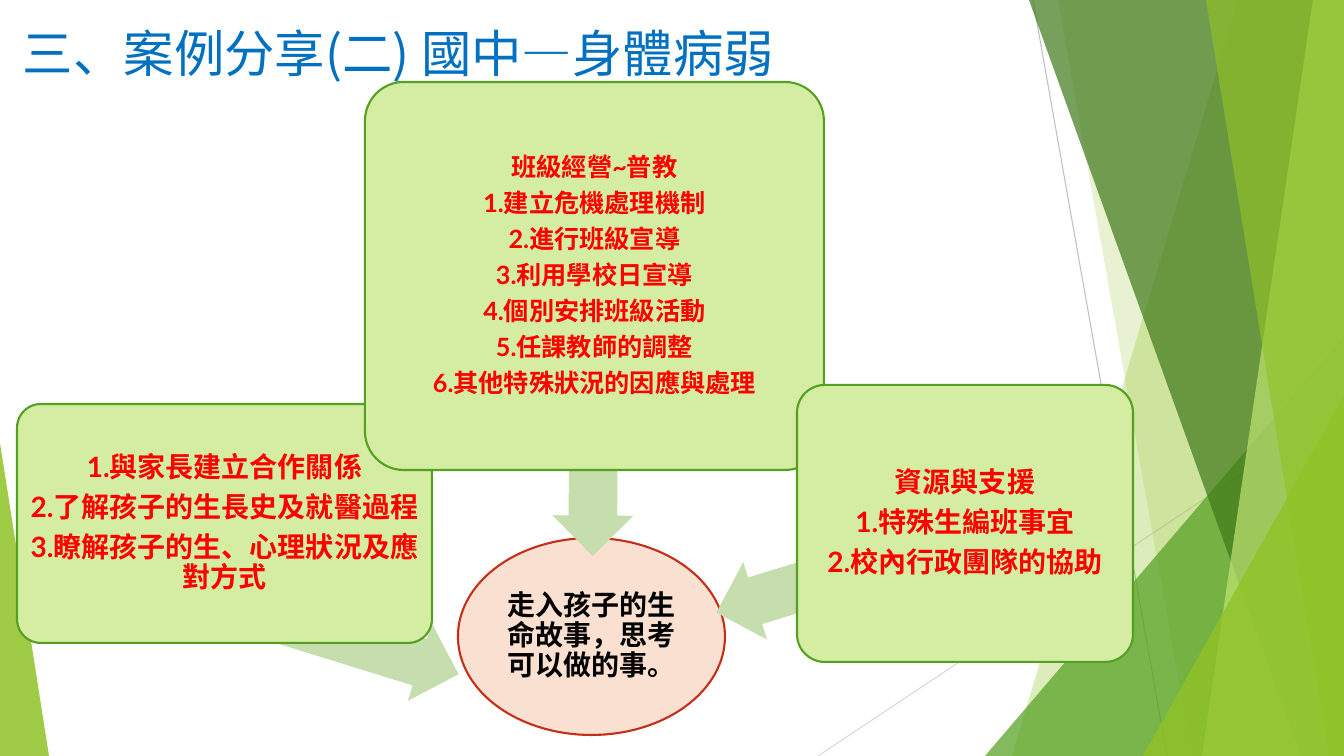
"""Build the case-sharing slide: three support boxes pointing at one central idea."""
from lxml.etree import SubElement
from pptx import Presentation
from pptx.dml.color import RGBColor
from pptx.enum.shapes import MSO_CONNECTOR, MSO_SHAPE
from pptx.enum.text import MSO_ANCHOR, PP_ALIGN
from pptx.oxml.ns import qn
from pptx.util import Pt

TITLE = "三、案例分享(二) 國中—身體病弱"
TITLE_AREA = (13, 13, 861, 79)
IDEA = {
    "area": (458, 538, 267, 197),
    "lines": ["走入孩子的生命故事，思考可以做的事。"],
}
SUPPORTS = [
    {
        "area": (17, 404, 415, 239),
        "arrow": (223, 598, 241, 81),
        "turn": 197.2,
        "size": 20,
        "lines": [
            "1.與家長建立合作關係",
            "2.了解孩子的生長史及就醫過程",
            "3.瞭解孩子的生、心理狀況及應對方式",
        ],
    },
    {
        "area": (365, 82, 459, 388),
        "arrow": (469, 391, 249, 81),
        "turn": 270.4,
        "size": 18,
        "lines": [
            "班級經營~普教",
            "1.建立危機處理機制",
            "2.進行班級宣導",
            "3.利用學校日宣導",
            "4.個別安排班級活動",
            "5.任課教師的調整",
            "6.其他特殊狀況的因應與處理",
        ],
    },
    {
        "area": (797, 385, 336, 277),
        "arrow": (711, 536, 247, 81),
        "turn": 343,
        "size": 20,
        "lines": ["資源與支援", "1.特殊生編班事宜", "2.校內行政團隊的協助"],
    },
]

THEME = {
    "title": "0070C0", "support_text": "FF0000", "idea_text": "000000",
    "support_fill": "D5EDA2", "support_line": "54A021",
    "idea_fill": "FAE0D1", "idea_line": "C42F1A", "arrow": "C6DDAD",
    "lime": "90C226", "leaf": "54A021", "forest": "3F7819", "pale": "C0E474",
    "title_size": 36, "idea_size": 20, "outline": 1.5, "ray": 0.75,
    "body_font": "Lato", "cjk_font": "Noto Sans CJK SC",
}

WIDTH, HEIGHT = 1344, 756
RAYS = [((1033, 0), (1167, HEIGHT), "BFBFBF"), ((WIDTH, 406), (818, HEIGHT), "D9D9D9")]
FACETS = [
    {"edge": (1238, 1012), "colour": "lime", "opacity": 30},
    {"edge": (1058, 1192), "colour": "lime", "opacity": 20},
    {"peak": (985, 336, 359, 420), "tip": 1, "colour": "leaf", "opacity": 72},
    {"edge": (1029, 1301), "colour": "forest", "opacity": 70},
    {"edge": (1313, 1202), "colour": "pale", "opacity": 70},
    {"edge": (1206, 1329), "colour": "lime", "opacity": 65},
    {"peak": (1143, 396, 201, 360), "tip": 1, "colour": "lime", "opacity": 80},
    {"peak": (0, 443, 49, 313), "tip": 0, "colour": "lime", "opacity": 85},
]
SCALE = 914400 / 100.8


def px(*lengths):
    return [round(length * SCALE) for length in lengths]


def apply(target, values):
    for name, value in values.items():
        setattr(target, name, value)


def paint(shape, fill, outline=None, opacity=100):
    shape.shadow.inherit = False
    shape.fill.solid()
    shape.fill.fore_color.rgb = RGBColor.from_string(fill)
    if opacity < 100:
        colour = shape.fill._xPr.find(".//" + qn("a:srgbClr"))
        SubElement(colour, qn("a:alpha")).set("val", str(opacity * 1000))
    if outline:
        shape.line.color.rgb = RGBColor.from_string(outline)
        shape.line.width = Pt(THEME["outline"])
    else:
        shape.line.fill.background()


def add_preset(shapes, preset, area, adjustments=()):
    shape = shapes.add_shape(preset, *px(*area))
    for index, value in enumerate(adjustments):
        shape.adjustments[index] = value
    return shape


def write(shape, lines, size, colour, font, inset, paragraph_format):
    frame = shape.text_frame
    margins = dict.fromkeys(
        ("margin_left", "margin_top", "margin_right", "margin_bottom"), px(inset)[0])
    apply(frame, {"word_wrap": True, "vertical_anchor": MSO_ANCHOR.MIDDLE, **margins})
    for index, line in enumerate(lines):
        paragraph = frame.add_paragraph() if index else frame.paragraphs[0]
        apply(paragraph, paragraph_format)
        run = paragraph.add_run()
        run.text = line
        apply(run.font, {"size": Pt(size), "name": font, "bold": font == THEME["body_font"]})
        run.font.color.rgb = RGBColor.from_string(colour)
        SubElement(run.font._element, qn("a:ea")).set("typeface", THEME["cjk_font"])


def write_body(shape, lines, size, colour, inset):
    write(shape, lines, size, colour, THEME["body_font"], inset, {
        "alignment": PP_ALIGN.CENTER, "line_spacing": 0.9, "space_after": Pt(size * 0.35)})


def add_backdrop(shapes):
    for start, end, colour in RAYS:
        ray = shapes.add_connector(MSO_CONNECTOR.STRAIGHT, *px(*start, *end))
        ray.line.color.rgb = RGBColor.from_string(colour)
        ray.line.width = Pt(THEME["ray"])
        SubElement(ray._element.spPr, qn("a:effectLst"))
    for facet in FACETS:
        if "edge" in facet:
            top, bottom = facet["edge"]
            outline = shapes.build_freeform(top, 0, scale=SCALE)
            outline.add_line_segments([(WIDTH, 0), (WIDTH, HEIGHT), (bottom, HEIGHT)])
            shape = outline.convert_to_shape()
        else:
            shape = add_preset(
                shapes, MSO_SHAPE.ISOSCELES_TRIANGLE, facet["peak"], [facet["tip"]])
        paint(shape, THEME[facet["colour"]], opacity=facet["opacity"])


def add_diagram(shapes):
    idea = add_preset(shapes, MSO_SHAPE.OVAL, IDEA["area"])
    paint(idea, THEME["idea_fill"], THEME["idea_line"])
    write_body(idea, IDEA["lines"], THEME["idea_size"], THEME["idea_text"], 1)
    idea.text_frame.paragraphs[0].alignment = PP_ALIGN.CENTER
    for support in SUPPORTS:
        arrow = add_preset(shapes, MSO_SHAPE.LEFT_ARROW, support["arrow"], [0.6, 0.5])
        arrow.rotation = support["turn"]
        paint(arrow, THEME["arrow"])
        box = add_preset(shapes, MSO_SHAPE.ROUNDED_RECTANGLE, support["area"], [0.1])
        paint(box, THEME["support_fill"], THEME["support_line"])
        write_body(box, support["lines"], support["size"], THEME["support_text"], 4)


def main():
    deck = Presentation()
    deck.slide_width, deck.slide_height = px(WIDTH, HEIGHT)
    shapes = deck.slides.add_slide(deck.slide_layouts[6]).shapes
    add_backdrop(shapes)
    heading = shapes.add_textbox(*px(*TITLE_AREA))
    write(heading, [TITLE], THEME["title_size"], THEME["title"], THEME["cjk_font"], 10,
          {"alignment": PP_ALIGN.LEFT})
    add_diagram(shapes)
    deck.save("out.pptx")


if __name__ == "__main__":
    main()
